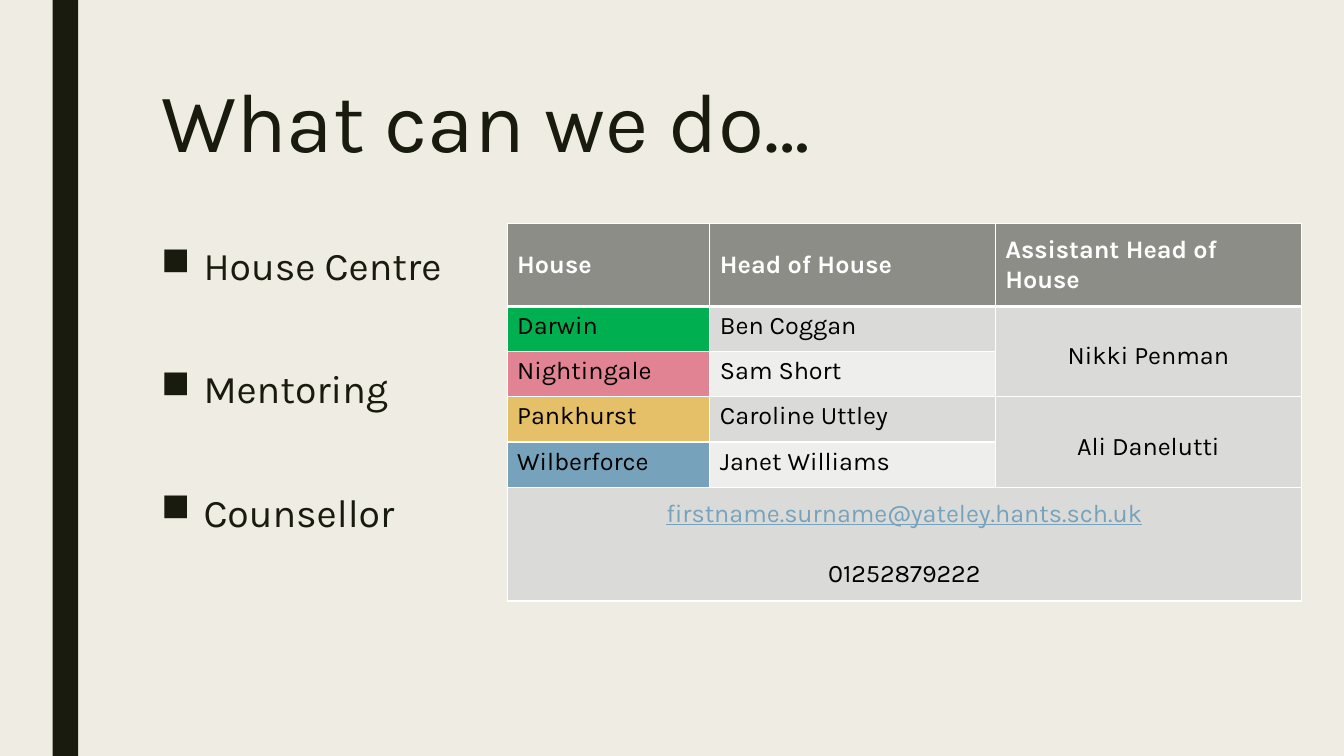
from lxml.etree import SubElement
from pptx import Presentation
from pptx.dml.color import RGBColor
from pptx.enum.shapes import MSO_SHAPE
from pptx.enum.text import MSO_ANCHOR as Anchor, PP_ALIGN as Align
from pptx.oxml.ns import qn
from pptx.util import Cm, Pt

FONT = "Karla"
CREAM = RGBColor(0xEF, 0xED, 0xE3)
INK = RGBColor(0x19, 0x1B, 0x0E)
WHITE = RGBColor(0xFF, 0xFF, 0xFF)
BLACK = RGBColor(0, 0, 0)
HEADER_GREY = RGBColor(0x8C, 0x8D, 0x86)
DARK_BAND = RGBColor(0xDA, 0xDB, 0xD9)
LIGHT_BAND = RGBColor(0xEE, 0xEE, 0xED)
GREEN = RGBColor(0x00, 0xB0, 0x50)
PINK = RGBColor(0xE2, 0x83, 0x94)
YELLOW = RGBColor(0xE6, 0xC0, 0x69)
BLUE = RGBColor(0x77, 0xA2, 0xBB)

SUPPORT = ["House Centre", "Mentoring", "Counsellor"]
HEADERS = ["House", "Head of House", "Assistant Head of House"]
HOUSES = [
    ("Darwin", GREEN, "Ben Coggan"),
    ("Nightingale", PINK, "Sam Short"),
    ("Pankhurst", YELLOW, "Caroline Uttley"),
    ("Wilberforce", BLUE, "Janet Williams"),
]
ASSISTANTS = ["Nikki Penman", "Ali Danelutti"]
EMAIL = "firstname.surname@yateley.hants.sch.uk"
PHONE = "01252879222"
COLUMN_WIDTHS = [5.11, 7.19, 7.72]
ROW_HEIGHTS = [2.08] + [1.14] * len(HOUSES) + [2.87]


def add_run(paragraph, text, size, color, bold=False, underline=False):
    """Add one formatted run to a paragraph."""
    run = paragraph.add_run()
    run.text = text
    font = run.font
    font.name, font.size, font.bold, font.underline = FONT, Pt(size), bold, underline
    font.color.rgb = color


def add_side_bar(slide):
    """Draw the dark vertical bar on the left."""
    bar = slide.shapes.add_shape(MSO_SHAPE.RECTANGLE, Cm(1.33), 0, Cm(0.64), Cm(19.05))
    bar.shadow.inherit = False
    bar.fill.solid()
    bar.fill.fore_color.rgb = INK
    bar.line.fill.background()


def add_text_frame(slide, left, top, width, height):
    """Add a wrapping text box and return its frame."""
    frame = slide.shapes.add_textbox(Cm(left), Cm(top), Cm(width), Cm(height)).text_frame
    frame.word_wrap = True
    return frame


def add_title(slide, text):
    """Add the slide title."""
    paragraph = add_text_frame(slide, 3.81, 1.9, 26.67, 4.11).paragraphs[0]
    paragraph.line_spacing = 0.89
    add_run(paragraph, text, 60, INK)


def add_bullets(slide, items):
    """Add the widely spaced list with square bullets."""
    frame = add_text_frame(slide, 3.81, 6.05, 8.9, 9.96)
    for index, item in enumerate(items):
        paragraph = frame.add_paragraph() if index else frame.paragraphs[0]
        properties = paragraph._p.get_or_add_pPr()
        properties.set("marL", str(Cm(1.07)))
        properties.set("indent", str(-Cm(1.07)))
        SubElement(properties, qn("a:buChar"), char="■")
        paragraph.line_spacing = 0.94
        if index:
            paragraph.space_before = Pt(56.5)
        add_run(paragraph, item, 28, INK)


def style_cell(cell, fill, top=1, bottom=1):
    """Give a cell white borders and a plain fill."""
    properties = cell._tc.get_or_add_tcPr()
    for side, width in (("L", 1), ("R", 1), ("T", top), ("B", bottom)):
        line = SubElement(properties, qn(f"a:ln{side}"), w=str(Pt(width)))
        SubElement(SubElement(line, qn("a:solidFill")), qn("a:srgbClr"), val=str(WHITE))
    cell.fill.solid()
    cell.fill.fore_color.rgb = fill


def write_cell(cell, text, color=BLACK, bold=False, align=Align.LEFT, anchor=Anchor.TOP):
    """Write one line of text into a cell."""
    cell.vertical_anchor = anchor
    paragraph = cell.text_frame.paragraphs[0]
    paragraph.alignment = align
    add_run(paragraph, text, 18, color, bold)


def write_contact(cell):
    """Write the e-mail address and telephone number."""
    cell.vertical_anchor = Anchor.MIDDLE
    email = cell.text_frame.paragraphs[0]
    phone = cell.text_frame.add_paragraph()
    email.alignment = phone.alignment = Align.CENTER
    phone.space_before = Pt(21.5)
    add_run(email, EMAIL, 18, BLUE, underline=True)
    add_run(phone, PHONE, 18, BLACK)


def add_house_table(slide):
    """Add the table of houses, heads and contact details."""
    table = slide.shapes.add_table(
        len(ROW_HEIGHTS), len(COLUMN_WIDTHS), Cm(12.78), Cm(5.64),
        Cm(sum(COLUMN_WIDTHS)), Cm(sum(ROW_HEIGHTS))).table
    table.first_row = table.horz_banding = False
    for column, width in zip(table.columns, COLUMN_WIDTHS):
        column.width = Cm(width)
    for row, height in zip(table.rows, ROW_HEIGHTS):
        row.height = Cm(height)

    for index, header in enumerate(HEADERS):
        cell = table.cell(0, index)
        style_cell(cell, HEADER_GREY, bottom=3)
        write_cell(cell, header, WHITE, bold=True, anchor=Anchor.MIDDLE)

    for row, (house, color, head) in enumerate(HOUSES, 1):
        fills = (color, DARK_BAND if row % 2 else LIGHT_BAND, DARK_BAND)
        for index, fill in enumerate(fills):
            style_cell(table.cell(row, index), fill, top=3 if row == 1 else 1)
        write_cell(table.cell(row, 0), house)
        write_cell(table.cell(row, 1), head)

    for index, assistant in enumerate(ASSISTANTS):
        row = 1 + 2 * index
        cell = table.cell(row, 2)
        cell.merge(table.cell(row + 1, 2))
        cell.margin_top = Cm(0.38)
        write_cell(cell, assistant, align=Align.CENTER, anchor=Anchor.MIDDLE)

    last = len(ROW_HEIGHTS) - 1
    for index in range(len(COLUMN_WIDTHS)):
        style_cell(table.cell(last, index), DARK_BAND)
    contact = table.cell(last, 0)
    contact.merge(table.cell(last, len(COLUMN_WIDTHS) - 1))
    write_contact(contact)


def main():
    """Build and save the slide."""
    presentation = Presentation()
    presentation.slide_width, presentation.slide_height = Cm(33.87), Cm(19.05)
    slide = presentation.slides.add_slide(presentation.slide_layouts[6])
    slide.background.fill.solid()
    slide.background.fill.fore_color.rgb = CREAM
    add_side_bar(slide)
    add_title(slide, "What can we do…")
    add_bullets(slide, SUPPORT)
    add_house_table(slide)
    presentation.save("out.pptx")


if __name__ == "__main__":
    main()
